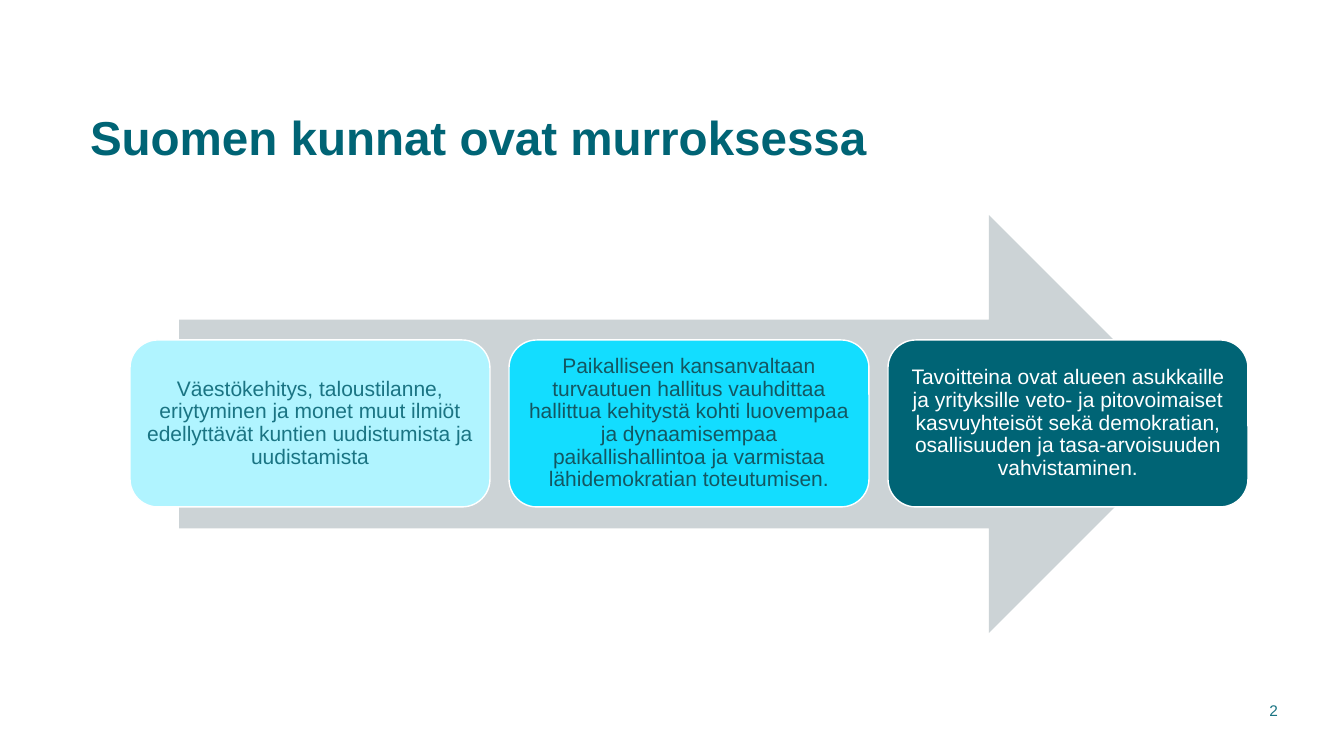
from pptx import Presentation
from pptx.dml.color import RGBColor
from pptx.enum.shapes import MSO_SHAPE as SHAPE
from pptx.enum.text import MSO_ANCHOR as ANCHOR, PP_ALIGN as ALIGN
from pptx.util import Emu, Pt

TEAL = RGBColor(0x00, 0x64, 0x75)
MID = RGBColor(0x1A, 0x74, 0x83)
DARK = RGBColor(0x13, 0x57, 0x62)
PALE = RGBColor(0xB0, 0xF4, 0xFF)
CYAN = RGBColor(0x13, 0xDD, 0xFF)
GREY = RGBColor(0xCC, 0xD3, 0xD6)
WHITE = RGBColor(0xFF, 0xFF, 0xFF)

SCALE = 914400 / 100.8
LEFT, TOP, WIDTH, HEIGHT, GAP = 130, 340, 360, 167, 19

STEPS = [
    ("Väestökehitys, taloustilanne, eriytyminen ja monet muut ilmiöt "
     "edellyttävät kuntien uudistumista ja uudistamista", PALE, MID),
    ("Paikalliseen kansanvaltaan turvautuen hallitus vauhdittaa hallittua "
     "kehitystä kohti luovempaa ja dynaamisempaa paikallishallintoa ja "
     "varmistaa lähidemokratian toteutumisen.", CYAN, DARK),
    ("Tavoitteina ovat alueen asukkaille ja yrityksille veto- ja "
     "pitovoimaiset kasvuyhteisöt sekä demokratian, osallisuuden ja "
     "tasa-arvoisuuden vahvistaminen.", TEAL, WHITE),
]


def px(n):
    return Emu(round(n * SCALE))


def write(shape, text, size, color, bold=False, align=ALIGN.LEFT,
          spacing=1.0, inset=(10, 5)):
    frame = shape.text_frame
    frame.word_wrap = True
    frame.vertical_anchor = ANCHOR.MIDDLE
    frame.margin_left = frame.margin_right = px(inset[0])
    frame.margin_top = frame.margin_bottom = px(inset[1])
    frame.text = text
    para = frame.paragraphs[0]
    para.alignment = align
    para.line_spacing = spacing
    font = para.runs[0].font
    font.name = "Arial"
    font.size = Pt(size)
    font.bold = bold
    font.color.rgb = color


def add_form(slide, kind, box, fill, line=None):
    form = slide.shapes.add_shape(kind, *map(px, box))
    form.shadow.inherit = False
    form.fill.solid()
    form.fill.fore_color.rgb = fill
    if line is None:
        form.line.fill.background()
    else:
        form.line.color.rgb = line
        form.line.width = Pt(1)
    return form


def add_title(slide, text):
    title = slide.shapes.title
    title.left, title.top, title.width, title.height = map(
        px, (90, 80, 1200, 119))
    write(title, text, 34, TEAL, bold=True, spacing=0.95, inset=(0, 5))


def add_steps(slide):
    for i, (text, fill, color) in enumerate(STEPS):
        box = (LEFT + i * (WIDTH + GAP), TOP, WIDTH, HEIGHT)
        step = add_form(slide, SHAPE.ROUNDED_RECTANGLE, box, fill, WHITE)
        write(step, text, 15, color, align=ALIGN.CENTER, spacing=0.9,
              inset=(6, 6))


def add_number(slide, text):
    number = slide.shapes.add_textbox(*map(px, (1166, 690, 122, 40)))
    write(number, text, 11, MID, align=ALIGN.RIGHT)


def main():
    deck = Presentation()
    deck.slide_width, deck.slide_height = px(1344), px(756)
    slide = deck.slides.add_slide(deck.slide_layouts[5])
    add_title(slide, "Suomen kunnat ovat murroksessa")
    add_form(slide, SHAPE.RIGHT_ARROW, (179, 215, 1019, 418), GREY)
    add_steps(slide)
    add_number(slide, "2")
    deck.save("out.pptx")


if __name__ == "__main__":
    main()
